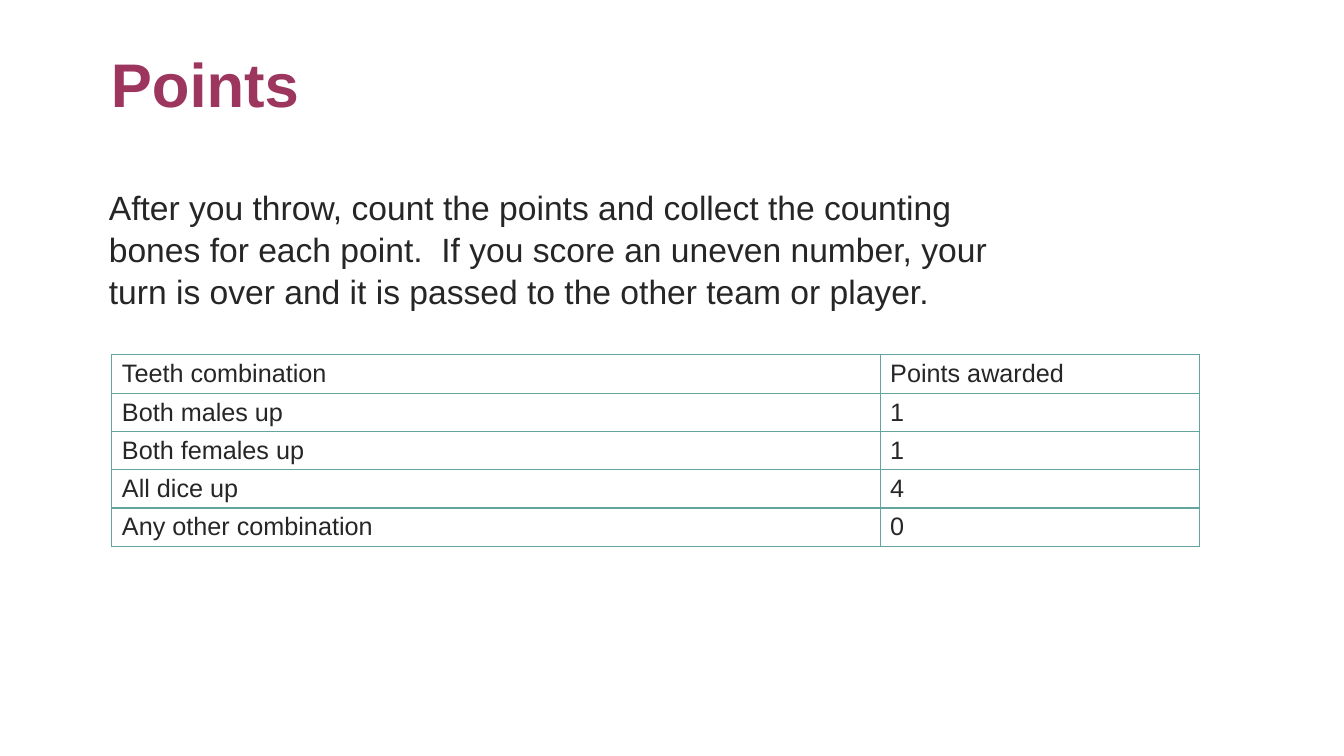
from lxml.etree import SubElement
from pptx import Presentation
from pptx.dml.color import RGBColor
from pptx.enum.text import MSO_ANCHOR as Anchor, PP_ALIGN as Align
from pptx.oxml.ns import qn
from pptx.util import Inches, Pt

TITLE = "Points"
RULE = ("After you throw, count the points and collect the counting bones "
        "for each point.  If you score an uneven number, your turn is over "
        "and it is passed to the other team or player.")
SCORES = [
    ("Teeth combination", "Points awarded"),
    ("Both males up", "1"),
    ("Both females up", "1"),
    ("All dice up", "4"),
    ("Any other combination", "0"),
]
WIDTHS = (7.62, 3.17)
ROW = 0.38
PLUM, INK, TEAL = "9D365E", "262626", "63A49F"


def color(code):
    return RGBColor.from_string(code)


def write(frame, text, size, code, bold=False):
    frame.text = text
    para = frame.paragraphs[0]
    para.alignment = Align.LEFT
    font = para.runs[0].font
    font.name, font.size, font.bold = "Arial", Pt(size), bold
    font.color.rgb = color(code)
    return para


def trim(frame):
    """Wrap the text from the top left corner, without margins."""
    frame.word_wrap = True
    frame.vertical_anchor = Anchor.TOP
    frame.margin_left = frame.margin_right = 0
    frame.margin_top = frame.margin_bottom = 0


def border(cell, code, width):
    props = cell._tc.get_or_add_tcPr()
    for place, side in enumerate(("lnL", "lnR", "lnT", "lnB")):
        line = SubElement(props, qn("a:" + side), w=str(Pt(width)))
        fill = SubElement(line, qn("a:solidFill"))
        SubElement(fill, qn("a:srgbClr"), val=code)
        props.insert(place, line)


def main():
    deck = Presentation()
    deck.slide_width, deck.slide_height = Inches(13.33), Inches(7.5)
    slide = deck.slides.add_slide(deck.slide_layouts[5])

    title = slide.shapes.title
    title.left, title.top = Inches(1.1), Inches(0.54)
    title.width, title.height = Inches(10.78), Inches(1.41)
    trim(title.text_frame)
    write(title.text_frame, TITLE, 44, PLUM, True).line_spacing = 0.9

    body = slide.shapes.add_textbox(
        Inches(1.08), Inches(1.83), Inches(8.82), Inches(1.45))
    trim(body.text_frame)
    write(body.text_frame, RULE, 24, INK).line_spacing = 1.05

    table = slide.shapes.add_table(
        len(SCORES), len(WIDTHS), Inches(1.11), Inches(3.52),
        Inches(sum(WIDTHS)), Inches(ROW * len(SCORES))).table
    table.first_row = table.horz_banding = False
    for col, width in zip(table.columns, WIDTHS):
        col.width = Inches(width)
    for row, texts in zip(table.rows, SCORES):
        row.height = Inches(ROW)
        for cell, text in zip(row.cells, texts):
            cell.fill.background()
            cell.vertical_anchor = Anchor.MIDDLE
            cell.margin_left = cell.margin_right = Inches(0.1)
            cell.margin_top = cell.margin_bottom = Inches(0.01)
            para = write(cell.text_frame, text, 18, INK)
            para.space_before = para.space_after = Pt(2)
            border(cell, TEAL, 1)

    deck.save("out.pptx")


if __name__ == "__main__":
    main()
